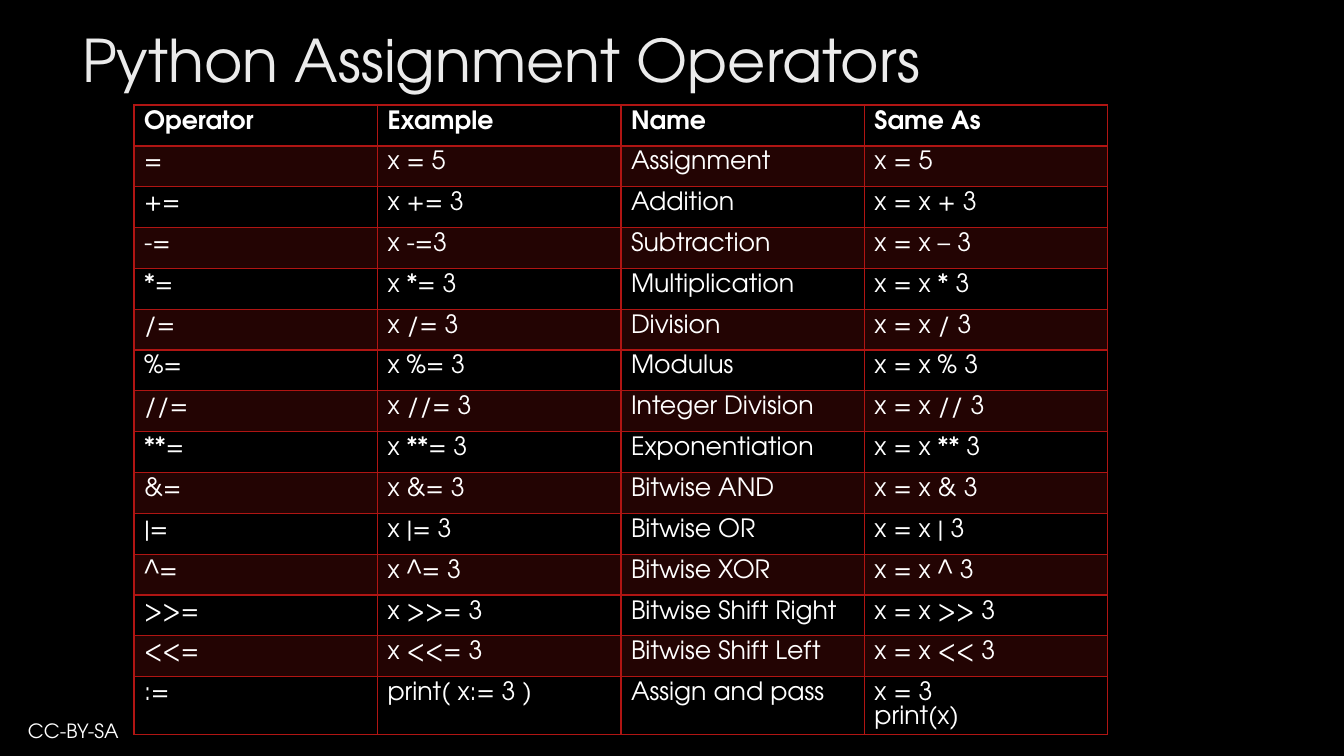
from lxml.etree import SubElement
from pptx import Presentation
from pptx.dml.color import RGBColor
from pptx.enum.text import MSO_ANCHOR, PP_ALIGN
from pptx.oxml.ns import qn
from pptx.util import Emu, Pt

TITLE = "Python Assignment Operators"
LICENCE = "CC-BY-SA"
HEADER = ("Operator", "Example", "Name", "Same As")
OPERATORS = [
    ("=", "x = 5", "Assignment", "x = 5"),
    ("+=", "x += 3", "Addition", "x = x + 3"),
    ("-=", "x -=3", "Subtraction", "x = x – 3"),
    ("*=", "x *= 3", "Multiplication", "x = x * 3"),
    ("/=", "x /= 3", "Division", "x = x / 3"),
    ("%=", "x %= 3", "Modulus", "x = x % 3"),
    ("//=", "x //= 3", "Integer Division", "x = x // 3"),
    ("**=", "x **= 3", "Exponentiation", "x = x ** 3"),
    ("&=", "x &= 3", "Bitwise AND", "x = x & 3"),
    ("|=", "x |= 3", "Bitwise OR", "x = x | 3"),
    ("^=", "x ^= 3", "Bitwise XOR", "x = x ^ 3"),
    (">>=", "x >>= 3", "Bitwise Shift Right", "x = x >> 3"),
    ("<<=", "x <<= 3", "Bitwise Shift Left", "x = x << 3"),
    (":=", "print( x:= 3 )", "Assign and pass", "x = 3\nprint(x)"),
]

FONT = "TeX Gyre Adventor"
BLACK, WHITE, PALE, RED = "000000", "FFFFFF", "EBEBEB", "B01513"
BAND_ALPHA = 20
SLIDE_SIZE = (1344, 756)
TITLE_BOX = (72, 11, 1037, 95)
LICENCE_BOX = (18, 714, 572, 34)
TABLE_LEFT, TABLE_TOP, TABLE_WIDTH = 134, 105, 974
SINGLE_ROWS_HEIGHT, LAST_ROW_HEIGHT = 572, 58


def px(length):
    return Emu(round(length * 914400 / 100.8))


def colour(value):
    return RGBColor.from_string(value)


def write(frame, text, size, text_colour, bold=False, spacing=None):
    """Fill a text frame, one paragraph for each line of text."""
    for number, line in enumerate(text.split("\n")):
        paragraph = frame.add_paragraph() if number else frame.paragraphs[0]
        paragraph.alignment = PP_ALIGN.LEFT
        paragraph.line_spacing = spacing
        run = paragraph.add_run()
        run.text = line
        run.font.name = FONT
        run.font.size = Pt(size)
        run.font.bold = bold
        run.font.color.rgb = colour(text_colour)


def add_borders(cell, widths):
    """Draw the red edges; widths maps L, R, T and B to points."""
    properties = cell._tc.get_or_add_tcPr()
    for side, width in widths.items():
        edge = SubElement(properties, qn(f"a:ln{side}"), w=str(Pt(width)))
        fill = SubElement(edge, qn("a:solidFill"))
        SubElement(fill, qn("a:srgbClr"), val=RED)


def fill_band(cell):
    cell.fill.solid()
    cell.fill.fore_color.rgb = colour(RED)
    band = cell._tc.tcPr.find(qn("a:solidFill")).find(qn("a:srgbClr"))
    SubElement(band, qn("a:alpha"), val=str(BAND_ALPHA * 1000))


def add_operator_table(slide):
    rows = [HEADER, *OPERATORS]
    table = slide.shapes.add_table(
        len(rows), len(HEADER), px(TABLE_LEFT), px(TABLE_TOP),
        px(TABLE_WIDTH), px(SINGLE_ROWS_HEIGHT + LAST_ROW_HEIGHT)).table
    table.horz_banding = False
    for column in table.columns:
        column.width = px(TABLE_WIDTH / len(HEADER))
    for r, texts in enumerate(rows):
        is_last = r == len(rows) - 1
        table.rows[r].height = px(
            LAST_ROW_HEIGHT if is_last else SINGLE_ROWS_HEIGHT / (len(rows) - 1))
        for c, text in enumerate(texts):
            cell = table.cell(r, c)
            write(cell.text_frame, text, 18, WHITE, bold=r == 0, spacing=Pt(17))
            add_borders(cell, {"L": 1, "R": 1, "T": 2 if r == 1 else 1,
                               "B": 2 if r == 0 else 1})
            if r % 2:
                fill_band(cell)
            else:
                cell.fill.background()


def main():
    deck = Presentation()
    deck.slide_width, deck.slide_height = map(px, SLIDE_SIZE)
    slide = deck.slides.add_slide(deck.slide_layouts[5])
    slide.background.fill.solid()
    slide.background.fill.fore_color.rgb = colour(BLACK)

    licence = slide.shapes.add_textbox(*map(px, LICENCE_BOX)).text_frame
    licence.word_wrap = True
    write(licence, LICENCE, 14, WHITE)

    title = slide.shapes.title
    title.left, title.top, title.width, title.height = map(px, TITLE_BOX)
    title.text_frame.vertical_anchor = MSO_ANCHOR.MIDDLE
    write(title.text_frame, TITLE, 42, PALE)

    add_operator_table(slide)
    deck.save("out.pptx")


if __name__ == "__main__":
    main()
